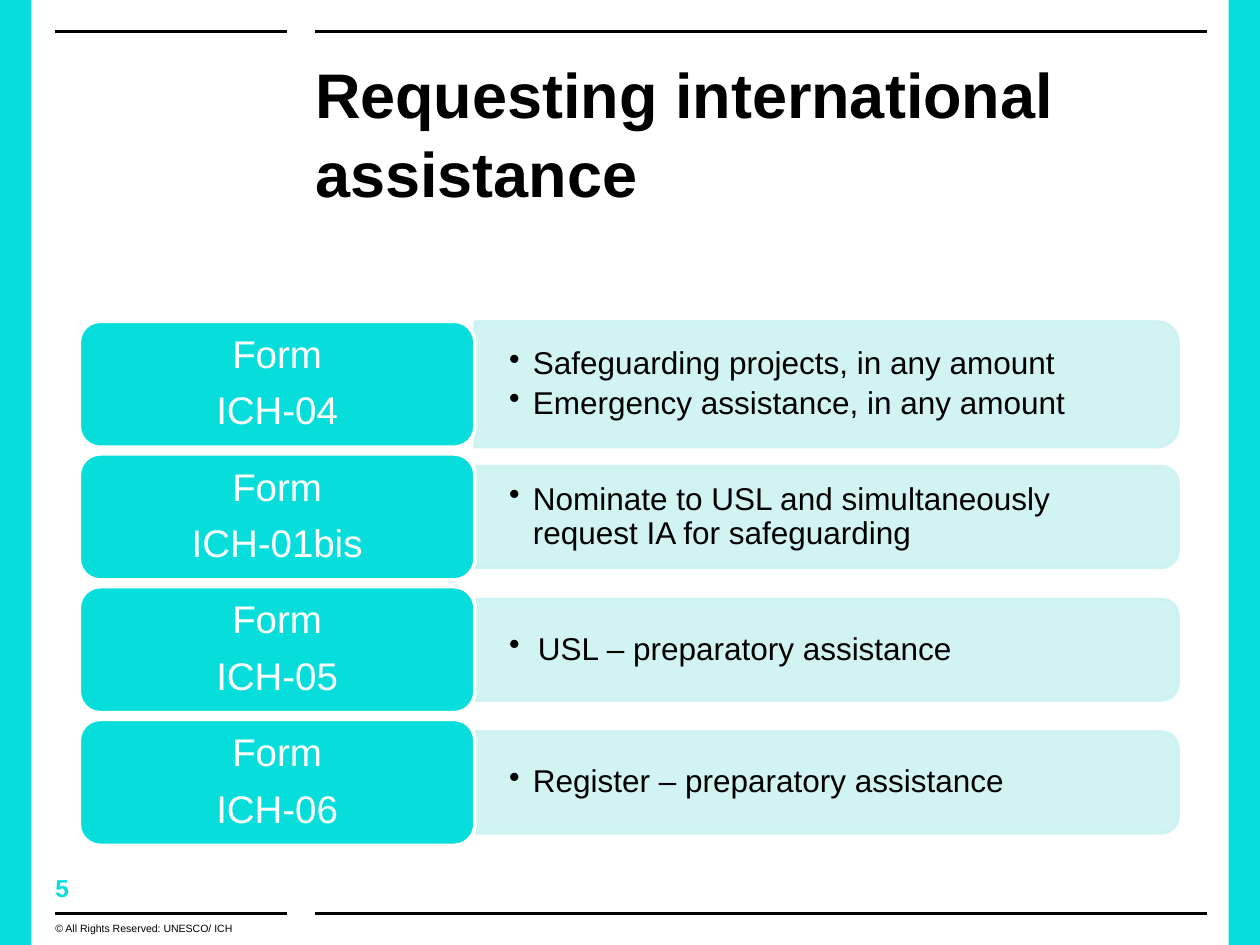
from dataclasses import dataclass

from lxml import etree
from pptx import Presentation
from pptx.dml.color import RGBColor
from pptx.enum.shapes import MSO_CONNECTOR, MSO_SHAPE
from pptx.enum.text import MSO_ANCHOR, PP_ALIGN
from pptx.oxml.ns import qn
from pptx.util import Inches, Pt


@dataclass(frozen=True)
class Theme:
    font: str = "Arial"
    accent: RGBColor = RGBColor(0x07, 0xDE, 0xDB)
    tint: RGBColor = RGBColor(0xCC, 0xF2, 0xF1)
    ink: RGBColor = RGBColor(0, 0, 0)
    paper: RGBColor = RGBColor(0xFF, 0xFF, 0xFF)
    title: int = 36
    label: int = 22
    body: int = 18
    number: int = 14
    credit: int = 6
    rule: int = 2
    tint_opacity: int = 90


@dataclass(frozen=True)
class FormRow:
    code: str
    uses: tuple[str, ...]
    panel_height: float = 0.8
    hanging: float = 0.19


THEME = Theme()
ROWS = (
    FormRow("ICH-04", ("Safeguarding projects, in any amount",
                       "Emergency assistance, in any amount"), panel_height=0.99),
    FormRow("ICH-01bis", ("Nominate to USL and simultaneously request IA for safeguarding",)),
    FormRow("ICH-05", ("USL – preparatory assistance",), hanging=0.23),
    FormRow("ICH-06", ("Register – preparatory assistance",)),
)
FIRST_TOP, LAST_TOP = 2.55, 5.71
ROW_PITCH = (LAST_TOP - FIRST_TOP) / (len(ROWS) - 1)
LABEL_LEFT, LABEL_WIDTH, LABEL_HEIGHT = 0.63, 3.14, 1.0
PANEL_LEFT, PANEL_WIDTH = LABEL_LEFT + LABEL_WIDTH, 5.58


def add_plain_shape(slide, kind: MSO_SHAPE, left: float, top: float,
                    width: float, height: float, fill: RGBColor):
    shape = slide.shapes.add_shape(kind, Inches(left), Inches(top),
                                   Inches(width), Inches(height))
    shape.shadow.inherit = False
    shape.fill.solid()
    shape.fill.fore_color.rgb = fill
    shape.line.fill.background()
    return shape


def outline(shape, color: RGBColor) -> None:
    shape.line.color.rgb = color
    shape.line.width = Pt(THEME.rule)


def add_rule(slide, left: float, right: float, y: float) -> None:
    rule = slide.shapes.add_connector(MSO_CONNECTOR.STRAIGHT, Inches(left), Inches(y),
                                      Inches(right), Inches(y))
    outline(rule, THEME.ink)
    etree.SubElement(rule._element.spPr, qn("a:effectLst"))


def set_insets(frame, horizontal: float, vertical: float) -> None:
    frame.margin_left = frame.margin_right = Inches(horizontal)
    frame.margin_top = frame.margin_bottom = Inches(vertical)
    frame.word_wrap = True


def add_run(paragraph, text: str, size: int, color: RGBColor, bold: bool = False) -> None:
    run = paragraph.add_run()
    run.text = text
    run.font.name = THEME.font
    run.font.size = Pt(size)
    run.font.bold = bold
    run.font.color.rgb = color


def add_paragraphs(frame, count: int, space_after: float) -> list:
    """Return the frame's paragraphs, extended to count and evenly spaced."""
    for _ in range(count - 1):
        frame.add_paragraph()
    for paragraph in frame.paragraphs:
        paragraph.line_spacing = 0.9
        paragraph.space_after = Pt(space_after)
    return list(frame.paragraphs)


def add_text(slide, text: str, left: float, top: float, width: float, height: float,
             size: int, color: RGBColor, bold: bool = False):
    box = slide.shapes.add_textbox(Inches(left), Inches(top), Inches(width), Inches(height))
    set_insets(box.text_frame, 0, 0)
    paragraph = box.text_frame.paragraphs[0]
    add_run(paragraph, text, size, color, bold)
    return paragraph


def add_bullet(paragraph, hanging: float) -> None:
    properties = paragraph._p.get_or_add_pPr()
    properties.set("marL", str(Inches(hanging)))
    properties.set("indent", str(-Inches(hanging)))
    etree.SubElement(properties, qn("a:buChar")).set("char", "•")


def add_panel(slide, row: FormRow, middle: float) -> None:
    """Draw the tinted panel, turned so its rounded corners face right, and its bullets."""
    height = row.panel_height
    panel = add_plain_shape(slide, MSO_SHAPE.ROUND_2_SAME_RECTANGLE,
                            PANEL_LEFT + (PANEL_WIDTH - height) / 2,
                            middle - PANEL_WIDTH / 2, height, PANEL_WIDTH, THEME.tint)
    panel.rotation = 90
    outline(panel, THEME.tint)
    for color in panel._element.spPr.iter(qn("a:srgbClr")):
        etree.SubElement(color, qn("a:alpha")).set("val", str(THEME.tint_opacity * 1000))

    text_height = height - 0.08
    box = slide.shapes.add_textbox(Inches(PANEL_LEFT), Inches(middle - text_height / 2),
                                   Inches(PANEL_WIDTH - 0.04), Inches(text_height))
    frame = box.text_frame
    set_insets(frame, 0.27, 0.14)
    frame.vertical_anchor = MSO_ANCHOR.MIDDLE
    for paragraph, use in zip(add_paragraphs(frame, len(row.uses), 3), row.uses):
        add_bullet(paragraph, row.hanging)
        add_run(paragraph, use, THEME.body, THEME.ink)


def add_label(slide, code: str, top: float) -> None:
    label = add_plain_shape(slide, MSO_SHAPE.ROUNDED_RECTANGLE, LABEL_LEFT, top,
                            LABEL_WIDTH, LABEL_HEIGHT, THEME.accent)
    outline(label, THEME.paper)
    frame = label.text_frame
    set_insets(frame, 0.09, 0.05)
    frame.vertical_anchor = MSO_ANCHOR.MIDDLE
    words = ("Form", code)
    for paragraph, word in zip(add_paragraphs(frame, len(words), 8.6), words):
        paragraph.alignment = PP_ALIGN.CENTER
        add_run(paragraph, word, THEME.label, THEME.paper)


def main() -> None:
    deck = Presentation()
    deck.slide_width, deck.slide_height = Inches(10), Inches(7.5)
    slide = deck.slides.add_slide(deck.slide_layouts[6])

    for band_left in (0, 9.75):
        add_plain_shape(slide, MSO_SHAPE.RECTANGLE, band_left, 0, 0.25, 7.5, THEME.accent)
    for y in (0.25, 7.25):
        add_rule(slide, 0.44, 2.28, y)
        add_rule(slide, 2.5, 9.58, y)

    heading = add_text(slide, "Requesting international assistance", 2.5, 0.41, 7.08, 1.21,
                       THEME.title, THEME.ink, bold=True)
    heading.line_spacing = 1.05
    add_text(slide, "5", 0.44, 6.93, 1.14, 0.24, THEME.number, THEME.accent, bold=True)
    add_text(slide, "© All Rights Reserved: UNESCO/ ICH", 0.44, 7.32, 1.83, 0.18,
             THEME.credit, THEME.ink)

    for index, row in enumerate(ROWS):
        top = FIRST_TOP + index * ROW_PITCH
        add_panel(slide, row, top + LABEL_HEIGHT / 2)
        add_label(slide, row.code, top)

    deck.save("out.pptx")


if __name__ == "__main__":
    main()
